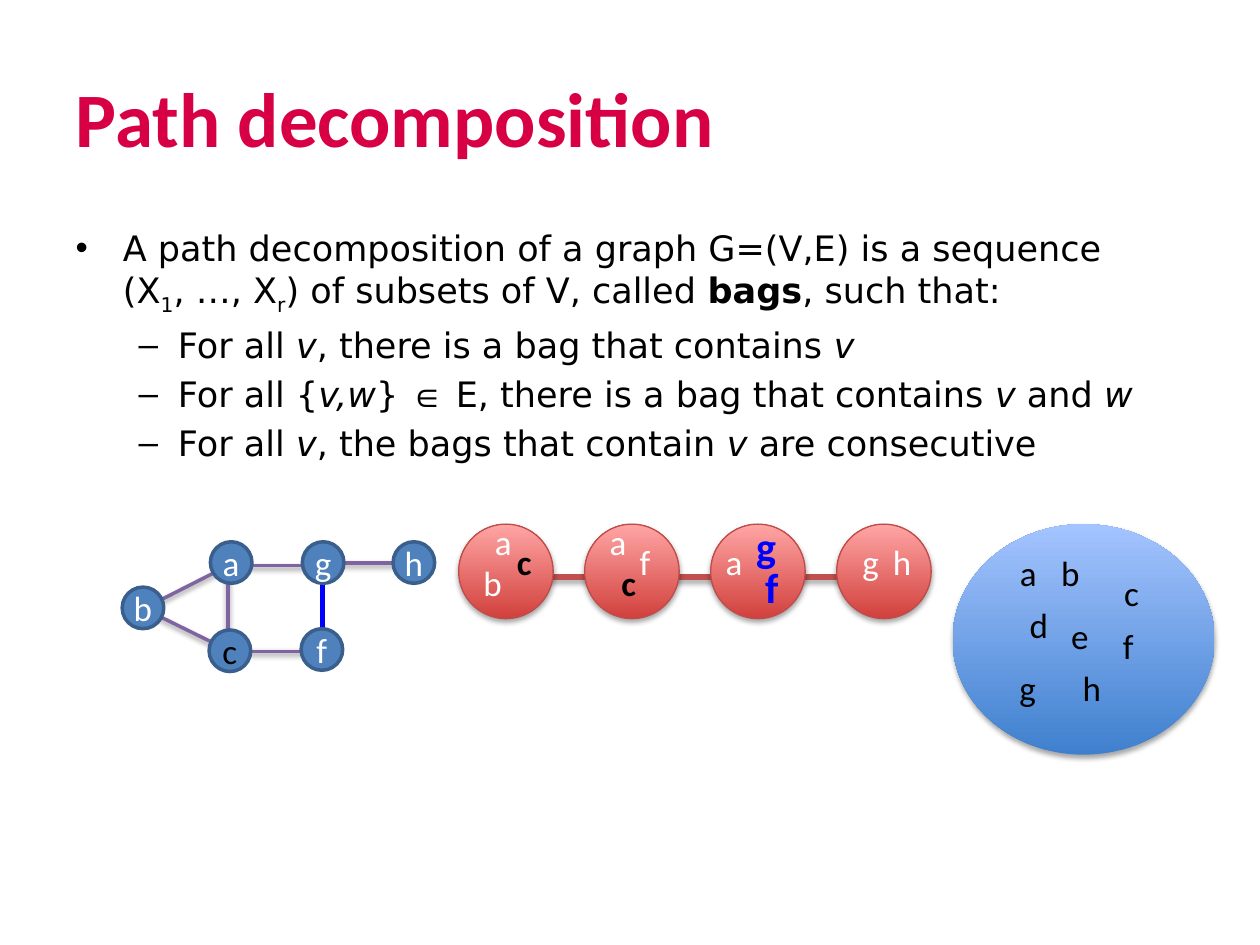
from typing import NamedTuple

from lxml.etree import SubElement
from pptx import Presentation
from pptx.dml.color import RGBColor
from pptx.enum.shapes import MSO_CONNECTOR, MSO_SHAPE
from pptx.enum.text import MSO_ANCHOR, MSO_AUTO_SIZE, PP_ALIGN
from pptx.oxml.ns import qn
from pptx.util import Inches, Pt

WHITE = RGBColor(0xFF, 0xFF, 0xFF)
BLACK = RGBColor(0x00, 0x00, 0x00)
BLUE = RGBColor(0x00, 0x00, 0xFF)
CRIMSON = RGBColor(0xD7, 0x00, 0x44)
PURPLE = RGBColor(0x80, 0x64, 0xA2)
NODE = RGBColor(0x4F, 0x81, 0xBD)
RIM = RGBColor(0x3A, 0x5F, 0x8C)
LINK = RGBColor(0xC0, 0x50, 0x4D)
BAG_RIM = RGBColor(0xBF, 0x4C, 0x48)
REDS = (RGBColor(0xD1, 0x40, 0x3C), RGBColor(0xFF, 0xA6, 0xA5))
BLUES = (RGBColor(0x3F, 0x80, 0xCE), RGBColor(0xA4, 0xC4, 0xFF))


class Edge(NamedTuple):
    x1: float
    y1: float
    x2: float
    y2: float
    color: RGBColor = PURPLE
    width: float = 2


class Node(NamedTuple):
    name: str
    x: float
    y: float
    color: RGBColor = WHITE


class Label(NamedTuple):
    text: str
    x: float
    y: float
    width: float
    color: RGBColor = BLACK
    size: int = 20
    bold: bool = False


# Body text: (level, runs), each run with a style:
# b bold, i italic, s subscript, m math symbol, n line break after the run
BODY = [
    (0, [("A path decomposition of a graph G=(V,E) is a sequence ", "n"),
         ("(X", ""), ("1", "s"), (", …, X", ""), ("r", "s"),
         (") of subsets of V, called ", ""), ("bags", "b"),
         (", such that:", "")]),
    (1, [("For all ", ""), ("v", "i"),
         (", there is a bag that contains ", ""), ("v", "i")]),
    (1, [("For all {", ""), ("v,w", "i"), ("} ", ""), ("∈", "m"),
         (" E, there is a bag that contains ", ""), ("v ", "i"),
         ("and ", ""), ("w", "i")]),
    (1, [("For all ", ""), ("v", "i"), (", the bags that contain ", ""),
         ("v", "i"), (" are consecutive", "")]),
]

BAG_TEXT = [
    Label("a", 3.81, 4.08, 0.37, WHITE),
    Label("a", 4.72, 4.08, 0.37, WHITE),
    Label("b", 3.72, 4.41, 0.38, WHITE),
    Label("c", 4, 4.24, 0.32, bold=True),
    Label("f", 4.97, 4.24, 0.3, WHITE),
    Label("h", 6.97, 4.24, 0.38, WHITE),
    Label("f", 5.97, 4.41, 0.31, BLUE, 24, True),
    Label("a", 5.64, 4.24, 0.37, WHITE),
    Label("g", 5.9, 4.08, 0.36, BLUE, 24, True),
    Label("g", 6.72, 4.24, 0.38, WHITE),
    Label("c", 4.83, 4.41, 0.32, bold=True),
]
EDGES = [
    Edge(2.6, 5.17, 1.85, 5.17), Edge(2.56, 4.47, 3.31, 4.47),
    Edge(2.56, 4.49, 2.56, 5.24, BLUE, 2.5), Edge(2.56, 4.49, 1.81, 4.49),
    Edge(1.81, 4.49, 1.81, 5.16), Edge(1.14, 4.83, 1.81, 4.49),
    Edge(1.14, 4.83, 1.81, 5.16),
]
NODES = [
    Node("b", 0.97, 4.66), Node("c", 1.66, 5, BLACK), Node("f", 2.39, 4.99),
    Node("h", 3.12, 4.3), Node("a", 1.67, 4.3), Node("g", 2.4, 4.3),
]
SET_TEXT = [
    Label("a", 7.99, 4.33, 0.34), Label("b", 8.32, 4.33, 0.35),
    Label("c", 8.82, 4.49, 0.32), Label("d", 8.07, 4.74, 0.35),
    Label("e", 8.4, 4.83, 0.34), Label("f", 8.81, 4.91, 0.29),
    Label("g", 7.99, 5.24, 0.33), Label("h", 8.49, 5.24, 0.35),
]


def shade(effects, alpha: int, dist: float) -> None:
    """Put a soft shadow straight below into an effect list."""
    drop = SubElement(effects, qn("a:outerShdw"), blurRad=str(Pt(3.1)),
                      dist=str(Pt(dist)), dir="5400000", rotWithShape="0")
    tint = SubElement(drop, qn("a:srgbClr"), val="000000")
    SubElement(tint, qn("a:alpha"), val=str(alpha * 1000))


def place(shape, x: float, y: float, w: float, h: float) -> None:
    shape.left, shape.top = Inches(x), Inches(y)
    shape.width, shape.height = Inches(w), Inches(h)


def write(frame, text: str, color: RGBColor, size: int, bold: bool) -> None:
    frame.text = text
    frame.word_wrap = False
    para = frame.paragraphs[0]
    para.alignment = PP_ALIGN.CENTER
    font = para.runs[0].font
    font.name, font.size, font.bold = "Calibri", Pt(size), bold
    font.color.rgb = color


def draw_edge(shapes, edge: Edge, alpha: int = 38, dist: float = 1.6) -> None:
    line = shapes.add_connector(MSO_CONNECTOR.STRAIGHT, *map(Inches, edge[:4]))
    line.line.color.rgb = edge.color
    line.line.width = Pt(edge.width)
    effects = SubElement(line._element.spPr, qn("a:effectLst"))
    if edge.color != BLUE:
        shade(effects, alpha, dist)


def draw_oval(shapes, x: float, y: float, w: float, h: float):
    oval = shapes.add_shape(MSO_SHAPE.OVAL, *map(Inches, (x, y, w, h)))
    oval.shadow.inherit = False
    return oval


def draw_ball(shapes, x: float, y: float, w: float, h: float, colors: tuple):
    """Draw a shaded oval, dark at the bottom and light at the top."""
    ball = draw_oval(shapes, x, y, w, h)
    ball.fill.gradient()
    ball.fill.gradient_angle = 90
    for stop, color, pos in zip(ball.fill.gradient_stops, colors, (0, 1)):
        stop.color.rgb, stop.position = color, pos
    ball.line.fill.background()
    shade(ball._element.spPr.find(qn("a:effectLst")), 35, 1.8)
    return ball


def draw_node(shapes, node: Node) -> None:
    oval = draw_oval(shapes, node.x, node.y, 0.33, 0.33)
    oval.fill.solid()
    oval.fill.fore_color.rgb = NODE
    oval.line.color.rgb = RIM
    oval.line.width = Pt(2)
    oval.text_frame.vertical_anchor = MSO_ANCHOR.MIDDLE
    write(oval.text_frame, node.name, node.color, 20, False)


def draw_label(shapes, label: Label) -> None:
    high = 0.5 if label.size > 20 else 0.44
    box = shapes.add_textbox(
        *map(Inches, (label.x, label.y, label.width, high)))
    write(box.text_frame, label.text, label.color, label.size, label.bold)
    box.text_frame.auto_size = MSO_AUTO_SIZE.SHAPE_TO_FIT_TEXT


def fill_body(frame) -> None:
    frame.auto_size = MSO_AUTO_SIZE.NONE
    for num, (level, runs) in enumerate(BODY):
        para = frame.add_paragraph() if num else frame.paragraphs[0]
        para.level = level
        if not num:
            para.space_before = Pt(0)
        for text, style in runs:
            run = para.add_run()
            run.text = text
            font = run.font
            font.name = "Arial" if style == "m" else "DejaVu Sans"
            font.size, font.color.rgb = Pt(20), BLACK
            font.bold, font.italic = style == "b", style == "i"
            if style == "s":
                font._element.set("baseline", "-25000")
            if style == "n":
                SubElement(para._p.add_br(), qn("a:rPr"), sz="2000")


def main() -> None:
    deck = Presentation()
    deck.slide_width, deck.slide_height = Inches(10), Inches(7.5)
    slide = deck.slides.add_slide(deck.slide_layouts[1])

    # Title and list
    title, body = slide.placeholders
    place(title, 0.5, 0.3, 9, 1.25)
    write(title.text_frame, "Path decomposition", CRIMSON, 44, True)
    title.text_frame.word_wrap = True
    title.text_frame.paragraphs[0].alignment = PP_ALIGN.LEFT
    place(body, 0.5, 1.75, 9, 4.95)
    fill_body(body.text_frame)

    # Path of bags
    bags = slide.shapes.add_group_shape().shapes
    draw_edge(bags, Edge(3.97, 4.58, 6.97, 4.58, LINK, 3), 35, 1.8)
    for col in range(4):
        bag = draw_ball(bags, 3.64 + col, 4.16, 0.75, 0.75, REDS)
        bag.line.color.rgb = BAG_RIM
        bag.line.width = Pt(0.75)
    for label in BAG_TEXT:
        draw_label(bags, label)

    # Graph
    graph = slide.shapes.add_group_shape().shapes
    for edge in EDGES:
        draw_edge(graph, edge)
    for node in NODES:
        draw_node(graph, node)

    # Vertex set
    group = slide.shapes.add_group_shape().shapes
    draw_ball(group, 7.56, 4.16, 2.08, 1.83, BLUES)
    for label in SET_TEXT:
        draw_label(group, label)

    deck.save("out.pptx")


if __name__ == "__main__":
    main()
